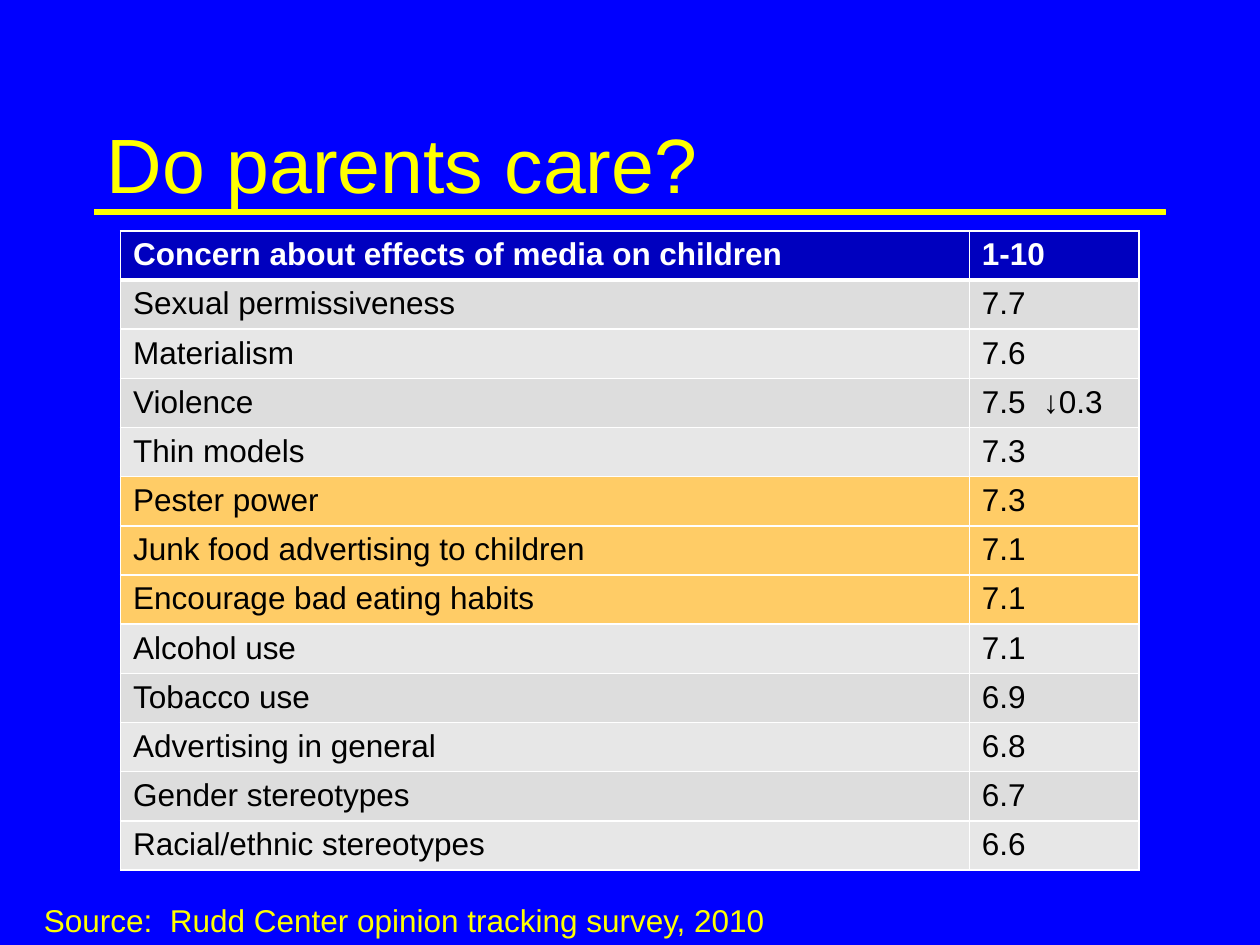
from lxml.etree import SubElement
from pptx import Presentation
from pptx.dml.color import RGBColor
from pptx.enum.shapes import MSO_SHAPE
from pptx.enum.text import MSO_ANCHOR
from pptx.oxml.ns import qn
from pptx.util import Inches, Pt

BLUE, NAVY, YELLOW = "0000FF", "0000BF", "FFFF00"
WHITE, BLACK = "FFFFFF", "000000"
BANDS = ("DDDDDD", "E7E7E7")
HIGHLIGHT = "FFCC66"

HEADER = ("Concern about effects of media on children", "1-10")
CONCERNS = [
    ("Sexual permissiveness", "7.7"),
    ("Materialism", "7.6"),
    ("Violence", "7.5  ↓0.3"),
    ("Thin models", "7.3"),
    ("Pester power", "7.3"),
    ("Junk food advertising to children", "7.1"),
    ("Encourage bad eating habits", "7.1"),
    ("Alcohol use", "7.1"),
    ("Tobacco use", "6.9"),
    ("Advertising in general", "6.8"),
    ("Gender stereotypes", "6.7"),
    ("Racial/ethnic stereotypes", "6.6"),
]
FOOD_CONCERNS = {"Pester power", "Junk food advertising to children",
                 "Encourage bad eating habits"}


def color(hex_code):
    return RGBColor.from_string(hex_code)


class SlideBuilder:
    """Places elements on a grid of 40 columns by 30 rows (quarter inches)."""

    font_name = "Arial"
    columns, rows = 40, 30

    def __init__(self, presentation, background):
        self.slide = presentation.slides.add_slide(presentation.slide_layouts[6])
        self.column = presentation.slide_width / self.columns
        self.row = presentation.slide_height / self.rows
        fill = self.slide.background.fill
        fill.solid()
        fill.fore_color.rgb = color(background)

    def box(self, left, top, width, height):
        return (round(left * self.column), round(top * self.row),
                round(width * self.column), round(height * self.row))

    def style(self, paragraph, size, hex_code, bold=False):
        font = paragraph.font
        font.name, font.size, font.bold = self.font_name, Pt(size), bold
        font.color.rgb = color(hex_code)

    def text(self, area, words, size, hex_code, anchor=MSO_ANCHOR.TOP):
        frame = self.slide.shapes.add_textbox(*self.box(*area)).text_frame
        frame.word_wrap = True
        frame.vertical_anchor = anchor
        frame.text = words
        self.style(frame.paragraphs[0], size, hex_code)

    def rule(self, area, hex_code):
        bar = self.slide.shapes.add_shape(
            MSO_SHAPE.FLOWCHART_PROCESS, *self.box(*area))
        bar.shadow.inherit = False
        bar.fill.solid()
        bar.fill.fore_color.rgb = color(hex_code)
        bar.line.color.rgb = color(hex_code)
        bar.line.width = Pt(0.75)

    def borders(self, cell, widths):
        """Draw white cell borders; must run before the cell is filled."""
        properties = cell._tc.get_or_add_tcPr()
        for side, width in zip("LRTB", widths):
            line = SubElement(properties, qn(f"a:ln{side}"), w=str(Pt(width)))
            fill = SubElement(line, qn("a:solidFill"))
            SubElement(fill, qn("a:srgbClr"), val=WHITE)

    def cell(self, cell, words, fill, hex_code, bold, widths):
        cell.margin_top, cell.margin_bottom = Inches(0.05), Inches(0.04)
        self.borders(cell, widths)
        cell.fill.solid()
        cell.fill.fore_color.rgb = color(fill)
        cell.text = words
        self.style(cell.text_frame.paragraphs[0], 18, hex_code, bold)

    def table(self, area, column_shares, header, records, highlighted):
        left, top, width, height = self.box(*area)
        lines = [header, *records]
        table = self.slide.shapes.add_table(
            len(lines), len(header), left, top, width, height).table
        for column, share in zip(table.columns, column_shares):
            column.width = round(width * share)
        for r, line in enumerate(lines):
            table.rows[r].height = round(height / len(lines))
            is_header = r == 0
            if is_header:
                fill = NAVY
            elif line[0] in highlighted:
                fill = HIGHLIGHT
            else:
                fill = BANDS[(r - 1) % 2]
            widths = (1, 1, 3 if r == 1 else 1, 3 if is_header else 1)
            for c, words in enumerate(line):
                self.cell(table.cell(r, c), words, fill,
                          WHITE if is_header else BLACK, is_header, widths)


def main():
    presentation = Presentation()
    presentation.slide_width, presentation.slide_height = Inches(10), Inches(7.5)
    builder = SlideBuilder(presentation, BLUE)
    builder.rule((3, 6.66, 34, 0.16), YELLOW)
    builder.text((3, 2.67, 34, 5), "Do parents care?", 44, YELLOW,
                 MSO_ANCHOR.MIDDLE)
    builder.table((3.83, 7.33, 32.33, 19.8), (5 / 6, 1 / 6),
                  HEADER, CONCERNS, FOOD_CONCERNS)
    builder.text((1, 28.4, 26, 1.6),
                 "Source:  Rudd Center opinion tracking survey, 2010", 18, YELLOW)
    presentation.save("out.pptx")


if __name__ == "__main__":
    main()
